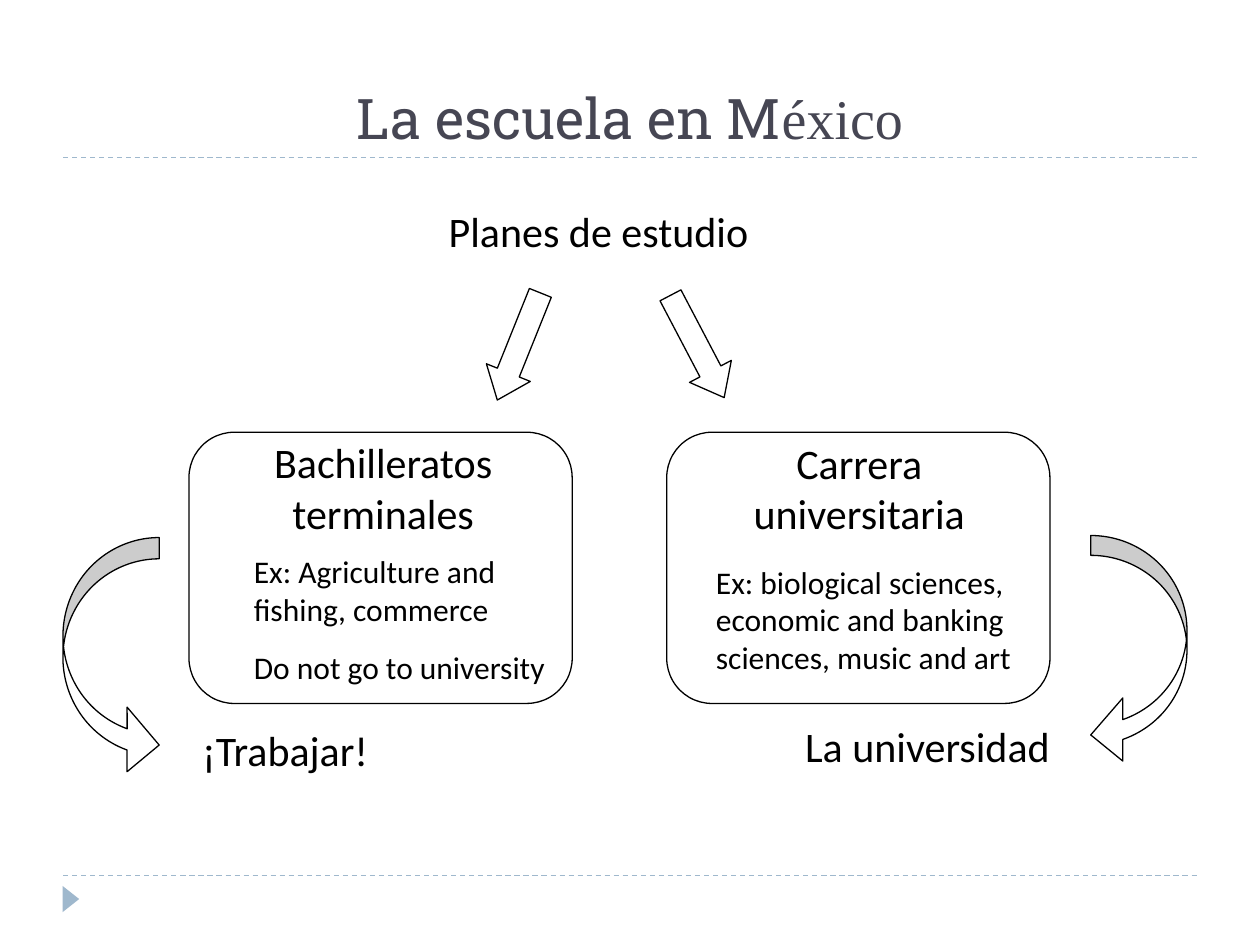
"""Build the slide that maps the study plans of Mexican schools."""
from dataclasses import dataclass

from lxml.etree import SubElement
from pptx import Presentation
from pptx.dml.color import RGBColor
from pptx.enum.dml import MSO_LINE_DASH_STYLE as Dash
from pptx.enum.shapes import MSO_CONNECTOR_TYPE as Connector
from pptx.enum.shapes import MSO_SHAPE as Preset
from pptx.enum.text import MSO_ANCHOR as Anchor
from pptx.enum.text import PP_ALIGN as Align
from pptx.oxml.ns import qn
from pptx.shapes.autoshape import Shape
from pptx.slide import Slide
from pptx.text.text import TextFrame
from pptx.util import Pt


@dataclass(frozen=True)
class Theme:
    """Colours, fonts and type sizes."""
    ink: str = "000000"
    paper: str = "FFFFFF"
    title: str = "464653"
    accent: str = "9FB8CD"
    body_font: str = "Calibri"
    title_font: str = "Roboto Slab"
    accent_font: str = "Times New Roman"
    title_size: float = 32
    heading_size: float = 24
    detail_size: float = 18
    line_width: float = 0.75


@dataclass(frozen=True)
class Box:
    """A rectangle in points."""
    left: float
    top: float
    width: float
    height: float

    def lengths(self) -> tuple[Pt, ...]:
        return tuple(Pt(value) for value in (self.left, self.top, self.width, self.height))


@dataclass(frozen=True)
class Outlined:
    """A white preset shape with a thin outline."""
    preset: Preset
    box: Box
    adjustments: tuple[float, ...]
    rotation: float = 0


@dataclass(frozen=True)
class Label:
    """A text with its place and format."""
    text: str
    box: Box
    size: float
    align: Align = Align.CENTER
    filled: bool = False


THEME = Theme()
CARD_TOP, CARD_WIDTH, CARD_HEIGHT = 247, 219, 155
CARD_LEFTS = (108, 381)
ARROW_HEAD = (0.5, 0.625)

OUTLINED = (
    Outlined(Preset.DOWN_ARROW, Box(283, 165, 27, 66), ARROW_HEAD, 21.9),
    Outlined(Preset.DOWN_ARROW, Box(385, 165, 27, 66), ARROW_HEAD, 332.3),
    *(Outlined(Preset.ROUNDED_RECTANGLE, Box(left, CARD_TOP, CARD_WIDTH, CARD_HEIGHT), (0.167,))
      for left in CARD_LEFTS),
    Outlined(Preset.CURVED_RIGHT_ARROW, Box(36, 307.2, 55, 137), (0.221, 0.671, 0.333)),
    Outlined(Preset.CURVED_LEFT_ARROW, Box(623.3, 306, 55, 132), (0.206, 0.656, 0.333)),
)

LABELS = (
    Label("Planes de estudio", Box(192, 114, 300, 36), THEME.heading_size),
    Label("¡Trabajar!", Box(102, 410.5, 122, 40), THEME.heading_size, filled=True),
    Label("La universidad", Box(448, 408, 164, 40), THEME.heading_size, filled=True),
    Label("Bachilleratos terminales", Box(126, 246, 186, 65.5), THEME.heading_size),
    Label("Ex: Agriculture and fishing, commerce", Box(138, 312, 186, 51),
          THEME.detail_size, Align.LEFT),
    Label("Do not go to university", Box(138, 367, 198, 29), THEME.detail_size, Align.LEFT),
    Label("Carrera universitaria", Box(399, 246.5, 184, 65.5), THEME.heading_size),
    Label("Ex: biological sciences, economic and banking sciences, music and art",
          Box(402, 318, 198, 94), THEME.detail_size, Align.LEFT),
)


def write(frame: TextFrame, text: str, *, size: float, font: str = THEME.body_font,
          color: str = THEME.ink, align: Align = Align.CENTER, space_after: float = 0) -> None:
    """Append one formatted run to the first paragraph."""
    paragraph = frame.paragraphs[0]
    paragraph.alignment = align
    paragraph.space_after = Pt(space_after)
    run = paragraph.add_run()
    run.text = text
    run.font.name = font
    run.font.size = Pt(size)
    run.font.color.rgb = RGBColor.from_string(color)


def add_filled(slide: Slide, preset: Preset, box: Box, color: str) -> Shape:
    """Add a flat preset shape without an outline."""
    shape = slide.shapes.add_shape(preset, *box.lengths())
    shape.shadow.inherit = False
    shape.fill.solid()
    shape.fill.fore_color.rgb = RGBColor.from_string(color)
    shape.line.fill.background()
    return shape


def add_outlined(slide: Slide, item: Outlined) -> None:
    """Draw one outlined shape."""
    shape = add_filled(slide, item.preset, item.box, THEME.paper)
    shape.line.color.rgb = RGBColor.from_string(THEME.ink)
    shape.line.width = Pt(THEME.line_width)
    shape.rotation = item.rotation
    for index, value in enumerate(item.adjustments):
        shape.adjustments[index] = value


def add_label(slide: Slide, label: Label) -> None:
    """Draw one label, on a white rectangle when filled."""
    if label.filled:
        shape = add_filled(slide, Preset.RECTANGLE, label.box, THEME.paper)
    else:
        shape = slide.shapes.add_textbox(*label.box.lengths())
    frame = shape.text_frame
    frame.word_wrap = True
    frame.vertical_anchor = Anchor.TOP
    write(frame, label.text, size=label.size, align=label.align,
          space_after=10 if label.filled else 0)


def add_rule(slide: Slide, top: float) -> None:
    """Draw a dashed rule across the slide."""
    rule = slide.shapes.add_connector(Connector.STRAIGHT, Pt(36), Pt(top), Pt(684), Pt(top))
    rule.line.color.rgb = RGBColor.from_string(THEME.accent)
    rule.line.width = Pt(THEME.line_width)
    rule.line.dash_style = Dash.DASH
    SubElement(rule._element.spPr, qn("a:effectLst"))


def add_title(slide: Slide) -> None:
    """Place and fill the title placeholder."""
    title = slide.shapes.title
    title.left, title.top, title.width, title.height = Box(36, 18, 648, 72).lengths()
    frame = title.text_frame
    frame.vertical_anchor = Anchor.BOTTOM
    for text, font in (("La escuela en M", THEME.title_font), ("éxico", THEME.accent_font)):
        write(frame, text, size=THEME.title_size, font=font, color=THEME.title)


def main() -> None:
    """Build and save the presentation."""
    presentation = Presentation()
    presentation.slide_width, presentation.slide_height = Pt(720), Pt(540)
    slide = presentation.slides.add_slide(presentation.slide_layouts[5])
    for top in (500.4, 90):
        add_rule(slide, top)
    marker = add_filled(slide, Preset.ISOSCELES_TRIANGLE, Box(33, 509, 15, 9.5), THEME.accent)
    marker.rotation = 90
    add_title(slide)
    for item in OUTLINED:
        add_outlined(slide, item)
    for label in LABELS:
        add_label(slide, label)
    presentation.save("out.pptx")


if __name__ == "__main__":
    main()
